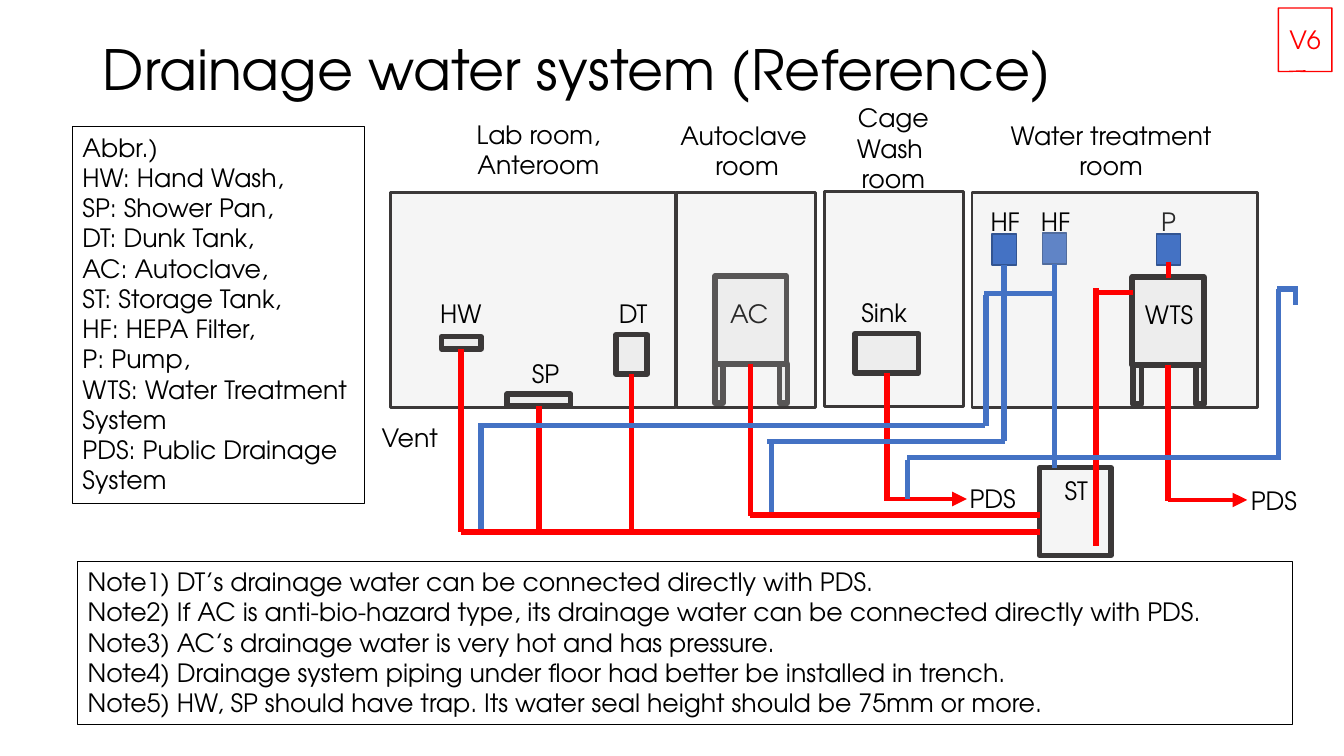
from lxml.etree import SubElement
from pptx import Presentation
from pptx.dml.color import RGBColor
from pptx.enum.shapes import MSO_CONNECTOR, MSO_SHAPE
from pptx.enum.text import MSO_ANCHOR, PP_ALIGN
from pptx.oxml.ns import qn
from pptx.util import Cm, Pt

FONT = "TeX Gyre Adventor"
COLORS = {"black": "000000", "red": "FF0000", "blue": "4472C4", "navy": "325491",
          "dark": "3B3838", "grey": "D0CECE"}

TITLE = "Drainage water system (Reference)"
ABBR = ["Abbr.)", "HW: Hand Wash,", "SP: Shower Pan,", "DT: Dunk Tank,",
        "AC: Autoclave,", "ST: Storage Tank,", "HF: HEPA Filter,", "P: Pump,",
        "WTS: Water Treatment System", "PDS: Public Drainage System"]
NOTES = [
    "DT’s drainage water can be connected directly with PDS.",
    "If AC is anti-bio-hazard type, its drainage water can be connected directly with PDS.",
    "AC’s drainage water is very hot and has pressure.",
    "Drainage system piping under floor had better be installed in trench.",
    "HW, SP should have trap. Its water seal height should be 75mm or more.",
]

# Places below are in inches: left, top, width, height
ROOMS = [(3.87, 1.91, 2.83, 2.13), (6.71, 1.91, 1.38, 2.13),
         (9.64, 1.91, 2.83, 2.13), (8.18, 1.9, 1.38, 2.13)]
TANKS = {"HW": (4.38, 3.34, 0.39, 0.12), "DT": (6.11, 3.32, 0.31, 0.39),
         "SP": (5.03, 3.91, 0.63, 0.12), "WTS": (11.23, 2.75, 0.71, 0.87),
         "ST": (10.31, 4.64, 0.71, 0.87), "Sink": (8.48, 3.31, 0.63, 0.39)}
AC = (7.09, 2.74, 0.71, 0.87)
UNITS = {"pump": (11.47, 2.32), "filter 1": (9.84, 2.32)}
BACK = (10.34, 2.31)  # filter 2, behind the room tint
UNIT = (0.24, 0.31)
LEG = (0.08, 0.39)

# Labels: text, left, top, width, height
UNDER = [("AC", 7.12, 2.91, 0.62, 0.4), ("P", 11.3, 2, 0.58, 0.4)]
LABELS = [
    ("Lab room, Anteroom", 4.12, 1.13, 2.44, 0.71),
    ("Autoclave \nroom", 6.6, 1.14, 1.62, 0.71),
    ("Cage Wash \nroom", 8.05, 0.97, 1.62, 1.01),
    ("Water treatment room", 9.8, 1.14, 2.44, 0.71),
    ("HW", 4.26, 2.91, 0.62, 0.4), ("SP", 5.1, 3.51, 0.62, 0.4),
    ("DT", 5.97, 2.91, 0.62, 0.4), ("Sink", 8.31, 2.9, 0.92, 0.4),
    ("WTS", 11.23, 2.92, 0.73, 0.4), ("ST", 10.31, 4.67, 0.73, 0.4),
    ("HF", 9.66, 2, 0.62, 0.4), ("HF", 10.16, 2, 0.62, 0.4),
    ("Vent", 3.51, 4.14, 1.11, 0.4),
    ("PDS", 9.1, 4.75, 1.49, 0.4), ("PDS", 11.89, 4.77, 1.49, 0.4),
]

# Pipes straight down from a box: box, bottom
DRAINS = [("HW", 5.28), ("SP", 5.25), ("DT", 5.25), ("AC", 5.12),
          ("Sink", 4.97), ("WTS", 4.97)]
VENTS = [("filter 1", 4.38), ("filter 2", 4.64)]
# Other pipes: x1, y1, x2, y2, width in points
RED = [(4.57, 5.28, 10.32, 5.28, 4), (7.44, 5.11, 10.32, 5.11, 4),
       (10.87, 2.86, 10.87, 5.42, 4), (10.89, 2.9, 11.24, 2.9, 4),
       (11.59, 2.6, 11.59, 2.76, 4)]
ARROWS = [(8.81, 4.95, 9.59, 4.95, 3.5), (11.58, 4.96, 12.37, 4.96, 3.5)]
BLUE = [(4.77, 4.2, 4.77, 5.25, 4), (4.77, 4.22, 9.77, 4.22, 4),
        (9.78, 2.93, 9.78, 4.23, 4), (9.76, 2.91, 10.47, 2.91, 4),
        (7.65, 4.37, 7.65, 5.08, 4), (7.61, 4.38, 9.97, 4.38, 3.5),
        (9, 4.56, 9, 4.95, 4), (9, 4.54, 12.71, 4.54, 3.5),
        (12.68, 2.87, 12.68, 4.52, 4), (12.67, 2.87, 12.86, 2.87, 4),
        (12.85, 2.84, 12.85, 3.03, 4)]


def cm(*vals):
    """Turn inches into lengths."""
    return [Cm(v * 2.54) for v in vals]


def rgb(name):
    return RGBColor.from_string(COLORS[name])


def write(frame, text, align=PP_ALIGN.CENTER, color="black", size=18):
    frame.word_wrap = True
    frame.text = text
    for par in frame.paragraphs:
        par.alignment = align
        par.font.name = FONT
        par.font.size = Pt(size)
        par.font.color.rgb = rgb(color)


def box(at, line, width, fill=None, alpha=None, kind=MSO_SHAPE.RECTANGLE):
    shape = shapes.add_shape(kind, *cm(*at))
    shape.shadow.inherit = False
    shape.line.color.rgb = rgb(line)
    shape.line.width = Pt(width)
    if fill:
        shape.fill.solid()
        shape.fill.fore_color.rgb = rgb(fill)
    else:
        shape.fill.background()
    if alpha:
        tint = shape._element.spPr.find(".//" + qn("a:srgbClr"))
        SubElement(tint, qn("a:alpha"), val=str(alpha * 1000))
    return shape


def tank(at, width=4):
    return box(at, "dark", width, "grey", 20)


def unit(at):
    return box(at + UNIT, "navy", 1, "blue")


def legs(*spots):
    for spot in spots:
        tank(spot + LEG)


def label(text, *at):
    write(shapes.add_textbox(*cm(*at)).text_frame, text)


def panel(at, lines):
    frame = box(at, "black", 0.75).text_frame
    frame.vertical_anchor = MSO_ANCHOR.TOP
    write(frame, "\n".join(lines), PP_ALIGN.LEFT)


def pipe(ends, color, width=4, arrow=False):
    line = shapes.add_connector(MSO_CONNECTOR.STRAIGHT, *ends)
    line.line.color.rgb = rgb(color)
    line.line.width = Pt(width)
    if arrow:
        SubElement(line.line._get_or_add_ln(), qn("a:tailEnd"), type="triangle")
    SubElement(line._element.spPr, qn("a:effectLst"))
    return line


def drop(name, low, color):
    """Run a pipe down from the middle of a box's bottom side."""
    top = parts[name]
    x = top.left + top.width // 2
    pipe((x, top.top + top.height, x, cm(low)[0]), color).begin_connect(top, 2)


deck = Presentation()
deck.slide_width, deck.slide_height = cm(13.33, 7.5)
slide = deck.slides.add_slide(deck.slide_layouts[5])
shapes = slide.shapes

title = shapes.title
title.left, title.top, title.width, title.height = cm(0.92, 0.4, 11.5, 0.63)
write(title.text_frame, TITLE, PP_ALIGN.LEFT, size=39.6)
title.text_frame.vertical_anchor = MSO_ANCHOR.MIDDLE
title.text_frame.paragraphs[0].line_spacing = 0.9

panel((0.72, 1.26, 2.9, 3.74), ABBR)
panel((0.77, 5.57, 12.05, 1.62),
      [f"Note{n}) {note}" for n, note in enumerate(NOTES, 1)])

parts = {"AC": tank(AC), "filter 2": unit(BACK)}
legs((7.09, 3.61), (7.73, 3.61))
for item in UNDER:
    label(*item)
for room in ROOMS:
    tank(room, 2)
for name, at in TANKS.items():
    parts[name] = tank(at)
legs((11.24, 3.62), (11.86, 3.62))
for name, at in UNITS.items():
    parts[name] = unit(at)

for name, low in DRAINS:
    drop(name, low, "red")
for *ends, width in RED:
    pipe(cm(*ends), "red", width)
for *ends, width in ARROWS:
    pipe(cm(*ends), "red", width, True)
for name, low in VENTS:
    drop(name, low, "blue")
for *ends, width in BLUE:
    pipe(cm(*ends), "blue", width)
for item in LABELS:
    label(*item)

mark = box((12.68, 0.08, 0.53, 0.63), "red", 1, kind=MSO_SHAPE.RECTANGULAR_CALLOUT)
mark.adjustments[0], mark.adjustments[1] = 0, 0.49
write(mark.text_frame, "V6", color="red")

deck.save("out.pptx")
